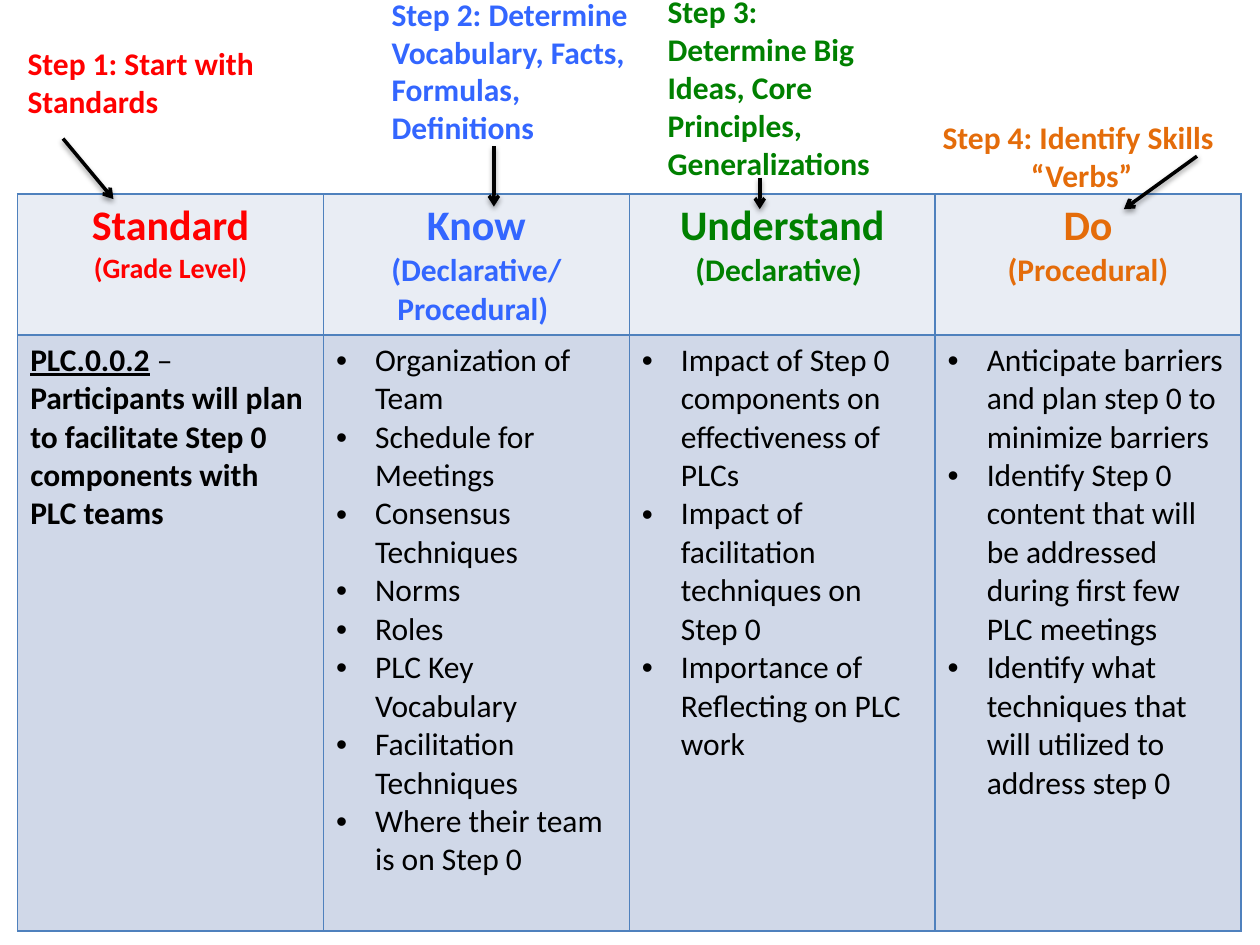
from dataclasses import dataclass

from lxml import etree
from pptx import Presentation
from pptx.dml.color import RGBColor
from pptx.enum.shapes import MSO_CONNECTOR
from pptx.enum.text import MSO_AUTO_SIZE, PP_ALIGN
from pptx.oxml import parse_xml
from pptx.oxml.ns import nsdecls, qn
from pptx.util import Inches, Pt

CENTER, LEFT = PP_ALIGN.CENTER, PP_ALIGN.LEFT
STRAIGHT = MSO_CONNECTOR.STRAIGHT
GROW = MSO_AUTO_SIZE.SHAPE_TO_FIT_TEXT


@dataclass(frozen=True)
class Theme:
    font: str = "Calibri"
    red: str = "FF0000"
    blue: str = "3366FF"
    green: str = "008000"
    orange: str = "E46C0A"
    black: str = "000000"
    head_fill: str = "E9EDF4"
    body_fill: str = "D0D8E8"
    border: str = "4F81BD"
    heading: int = 24
    text: int = 18
    small: int = 16


T = Theme()


def add_run(p, text, color, size=T.text, bold=True, underline=False):
    r = p.add_run()
    r.text = text
    r.font.name = T.font
    r.font.size = Pt(size)
    r.font.bold = bold
    r.font.underline = underline
    r.font.color.rgb = RGBColor.from_string(color)


def style_cell(cell, fill):
    """Fill the cell and draw a thin border on its four sides."""
    cell.fill.solid()
    cell.fill.fore_color.rgb = RGBColor.from_string(fill)
    for i, side in enumerate(("lnL", "lnR", "lnT", "lnB")):
        cell._tc.tcPr.insert(i, parse_xml(
            f'<a:{side} {nsdecls("a")} w="{Pt(1)}"><a:solidFill>'
            f'<a:srgbClr val="{T.border}"/></a:solidFill></a:{side}>'))


prs = Presentation()
prs.slide_width, prs.slide_height = Inches(10), Inches(7.5)
s = prs.slides.add_slide(prs.slide_layouts[6])

# Table: one column per step
columns = [
    ("Standard", "(Grade Level)", T.small, T.red, []),
    ("Know", "(Declarative/Procedural) ", T.text, T.blue, [
        "Organization of Team", "Schedule for Meetings", "Consensus Techniques",
        "Norms", "Roles", "PLC Key Vocabulary", "Facilitation Techniques",
        "Where their team is on Step 0"]),
    ("Understand", "(Declarative) ", T.text, T.green, [
        "Impact of Step 0 components on effectiveness of PLCs",
        "Impact of facilitation techniques on Step 0",
        "Importance of Reflecting on PLC work"]),
    ("Do", "(Procedural)", T.text, T.orange, [
        "Anticipate barriers and plan step 0 to minimize barriers",
        "Identify Step 0 content that will be addressed during first few PLC meetings",
        "Identify what techniques that will utilized to address step 0"]),
]
table = s.shapes.add_table(2, len(columns), Inches(0.14), Inches(1.54),
                           Inches(9.71), Inches(5.83)).table
table.rows[0].height, table.rows[1].height = Inches(1.1), Inches(4.73)

for col, (title, kind, kind_size, color, items) in enumerate(columns):
    head, body = table.cell(0, col), table.cell(1, col)
    style_cell(head, T.head_fill)
    style_cell(body, T.body_fill)
    tf = head.text_frame
    for p, text, size in ((tf.paragraphs[0], title, T.heading),
                          (tf.add_paragraph(), kind, kind_size)):
        p.alignment = CENTER
        add_run(p, text, color, size)
    tf = body.text_frame
    for i, item in enumerate(items):
        p = tf.add_paragraph() if i else tf.paragraphs[0]
        pPr = p._p.get_or_add_pPr()
        pPr.set("marL", str(Inches(0.31)))
        pPr.set("indent", str(Inches(-0.31)))
        etree.SubElement(pPr, qn("a:buFont"), typeface="Arial")
        etree.SubElement(pPr, qn("a:buChar"), char="•")
        add_run(p, item, T.black, bold=False)

p = table.cell(1, 0).text_frame.paragraphs[0]
add_run(p, "PLC.0.0.2", T.black, underline=True)
add_run(p, " – ", T.black, bold=False)
add_run(p, "Participants will plan to facilitate Step 0 components with PLC teams",
        T.black)

# Step labels, each with an arrow to its column
steps = [
    (["Step 1: Start with Standards"], T.red, LEFT,
     (0.12, 0.3, 2.99, 0.71), (0.5, 1.1, 0.9, 1.58)),
    (["Step 2: Determine Vocabulary, Facts, Formulas, Definitions"], T.blue, LEFT,
     (3.01, -0.09, 2.2, 1.31), (3.92, 1.16, 3.92, 1.64)),
    (["Step 3: Determine Big Ideas, Core Principles, Generalizations"], T.green, LEFT,
     (5.2, -0.11, 1.97, 1.62), (6.03, 1.41, 6.03, 1.66)),
    (["Step 4: Identify Skills ", "“Verbs”"], T.orange, CENTER,
     (7.17, 0.89, 2.83, 0.71), (9.5, 1.24, 8.92, 1.66)),
]
for lines, color, align, box, ends in steps:
    tf = s.shapes.add_textbox(*map(Inches, box)).text_frame
    tf.word_wrap = True
    tf.auto_size = GROW
    for i, line in enumerate(lines):
        p = tf.add_paragraph() if i else tf.paragraphs[0]
        p.alignment = align
        add_run(p, line, color)

    arrow = s.shapes.add_connector(STRAIGHT, *map(Inches, ends))
    arrow.line.width = Pt(2)
    arrow.line.color.rgb = RGBColor.from_string(T.black)
    etree.SubElement(arrow.line._get_or_add_ln(), qn("a:tailEnd"), type="arrow")
    arrow._element.spPr.append(parse_xml(
        f'<a:effectLst {nsdecls("a")}><a:outerShdw blurRad="{Pt(3.1)}" '
        f'dist="{Pt(1.6)}" dir="5400000" rotWithShape="0">'
        f'<a:srgbClr val="{T.black}"><a:alpha val="38000"/></a:srgbClr>'
        '</a:outerShdw></a:effectLst>'))

prs.save("out.pptx")
